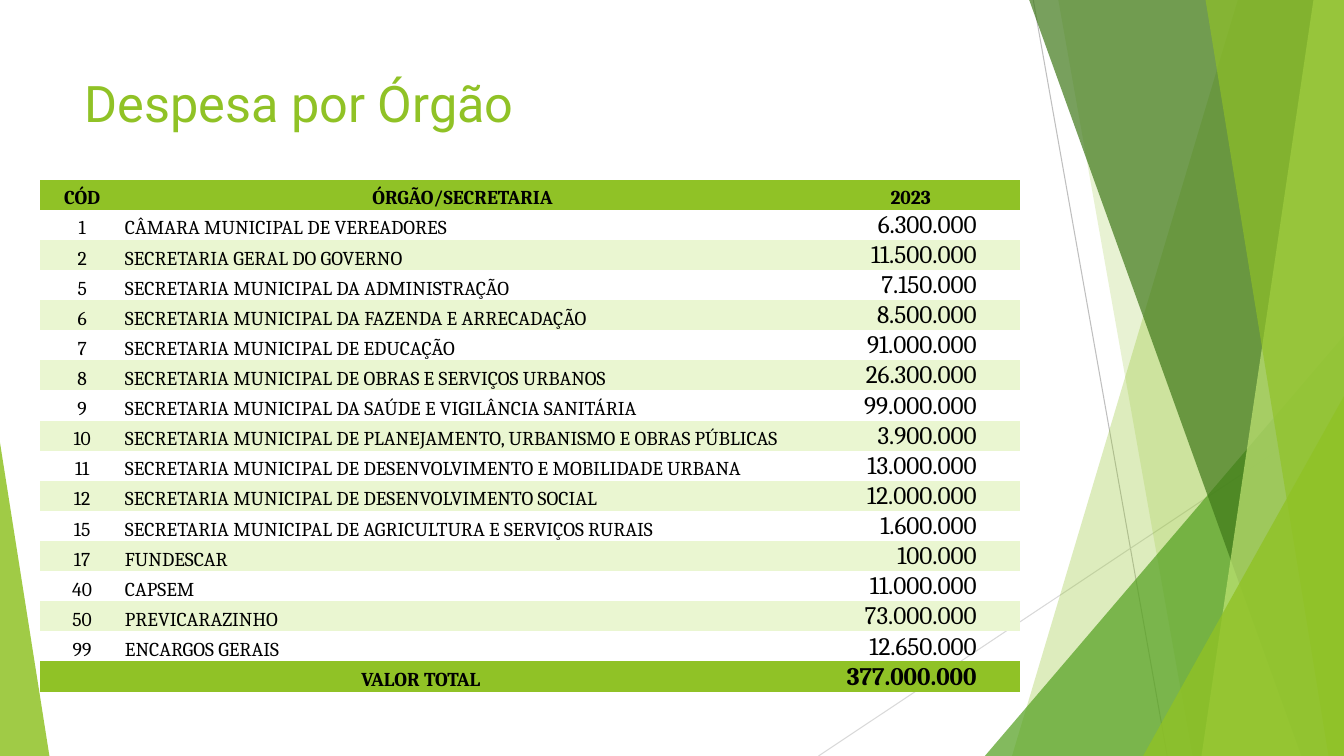
from lxml import etree
from pptx import Presentation
from pptx.dml.color import RGBColor
from pptx.enum.shapes import MSO_CONNECTOR, MSO_SHAPE
from pptx.enum.text import MSO_ANCHOR, MSO_AUTO_SIZE, PP_ALIGN
from pptx.oxml.ns import qn
from pptx.util import Inches, Pt

LINE = MSO_CONNECTOR.STRAIGHT
WEDGE = MSO_SHAPE.ISOSCELES_TRIANGLE
TOP, BOTTOM = MSO_ANCHOR.TOP, MSO_ANCHOR.BOTTOM
LEFT, MID, RIGHT = PP_ALIGN.LEFT, PP_ALIGN.CENTER, PP_ALIGN.RIGHT
NO_FIT = MSO_AUTO_SIZE.NONE

WIDE, HIGH = Inches(13.333), Inches(7.5)
PLAIN = "{2D5ABB26-0587-4C30-8999-92F81FD0307C}"
COLORS = {
    "lime": "90C226", "pale": "C0E474", "leaf": "54A021", "moss": "3F7819",
    "band": "EAF6D1", "text": "000000", "gray": "BFBFBF", "mist": "D9D9D9",
}

# Lines: start x, y and end x, y, in percent of the box
LINES = [(76.88, 0, 86.85, 100, "gray"), (100, 53.73, 60.9, 100, "mist")]
# Facets reach the right edge: top x, bottom x, color, opacity
BACK = [(92.1, 75.3, "lime", 30), (78.75, 88.73, "lime", 20)]
FRONT = [(76.58, 96.83, "moss", 70), (97.73, 89.4, "pale", 70),
         (89.7, 98.85, "lime", 65)]
# Wedges stand on the bottom edge: left, top, width, tip, color, opacity
LEAF = (73.28, 44.4, 26.72, 1, "leaf", 72)
SIDES = [(85.05, 52.4, 14.95, 1, "lime", 80), (0, 58.53, 3.68, 0, "lime", 85)]

HEAD = ("CÓD", "ÓRGÃO/SECRETARIA", "2023")
ROWS = [
    ("1", "CÂMARA MUNICIPAL DE VEREADORES", "6.300.000"),
    ("2", "SECRETARIA GERAL DO GOVERNO", "11.500.000"),
    ("5", "SECRETARIA MUNICIPAL DA ADMINISTRAÇÃO", "7.150.000"),
    ("6", "SECRETARIA MUNICIPAL DA FAZENDA E ARRECADAÇÃO", "8.500.000"),
    ("7", "SECRETARIA MUNICIPAL DE EDUCAÇÃO", "91.000.000"),
    ("8", "SECRETARIA MUNICIPAL DE OBRAS E SERVIÇOS URBANOS", "26.300.000"),
    ("9", "SECRETARIA MUNICIPAL DA SAÚDE E VIGILÂNCIA SANITÁRIA", "99.000.000"),
    ("10", "SECRETARIA MUNICIPAL DE PLANEJAMENTO, URBANISMO E OBRAS PÚBLICAS",
     "3.900.000"),
    ("11", "SECRETARIA MUNICIPAL DE DESENVOLVIMENTO E MOBILIDADE URBANA",
     "13.000.000"),
    ("12", "SECRETARIA MUNICIPAL DE DESENVOLVIMENTO SOCIAL", "12.000.000"),
    ("15", "SECRETARIA MUNICIPAL DE AGRICULTURA E SERVIÇOS RURAIS", "1.600.000"),
    ("17", "FUNDESCAR", "100.000"),
    ("40", "CAPSEM", "11.000.000"),
    ("50", "PREVICARAZINHO", "73.000.000"),
    ("99", "ENCARGOS GERAIS", "12.650.000"),
]
TOTAL = ("VALOR TOTAL", "", "377.000.000")
SHARES = (8.54, 69.14, 22.32)


def color(name):
    return RGBColor.from_string(COLORS[name])


def part(box, x, y, w, h):
    """Return the sub-box given in percent of a box."""
    left, top, wide, high = box
    return (int(left + wide * x / 100), int(top + high * y / 100),
            int(wide * w / 100), int(high * h / 100))


def write(frame, text, font, size, tint, align, bold=False):
    para = frame.paragraphs[0]
    para.alignment = align
    run = para.add_run()
    run.text = text
    run.font.name, run.font.size, run.font.bold = font, Pt(size), bold
    run.font.color.rgb = color(tint)


def paint(shape, tint, alpha):
    shape.shadow.inherit = False
    shape.line.fill.background()
    shape.fill.solid()
    shape.fill.fore_color.rgb = color(tint)
    node = shape.fill._xPr.find(qn("a:solidFill"))[0]
    etree.SubElement(node, qn("a:alpha"), val=str(alpha * 1000))


def add_line(slide, box, x1, y1, x2, y2, tint):
    start, end = part(box, x1, y1, 0, 0), part(box, x2, y2, 0, 0)
    line = slide.shapes.add_connector(LINE, *start[:2], *end[:2])
    line.line.color.rgb = color(tint)
    line.line.width = Pt(0.75)
    etree.SubElement(line._element.spPr, qn("a:effectLst"))


def add_facet(slide, box, top, base, tint, alpha):
    points = [part(box, x, y, 0, 0)[:2]
              for x, y in ((top, 0), (100, 0), (100, 100), (base, 100))]
    form = slide.shapes.build_freeform(*points[0])
    form.add_line_segments(points[1:], close=True)
    paint(form.convert_to_shape(), tint, alpha)


def add_wedge(slide, box, x, y, width, tip, tint, alpha):
    wedge = slide.shapes.add_shape(WEDGE, *part(box, x, y, width, 100 - y))
    wedge.adjustments[0] = tip
    paint(wedge, tint, alpha)


def add_decor(slide, box):
    for line in LINES:
        add_line(slide, box, *line)
    for facet in BACK:
        add_facet(slide, box, *facet)
    add_wedge(slide, box, *LEAF)
    for facet in FRONT:
        add_facet(slide, box, *facet)
    for wedge in SIDES:
        add_wedge(slide, box, *wedge)


def add_title(slide, box):
    title = slide.shapes.title
    title.left, title.top, title.width, title.height = box
    frame = title.text_frame
    frame.word_wrap, frame.auto_size = True, NO_FIT
    frame.vertical_anchor = TOP
    write(frame, "Despesa por Órgão", "Roboto", 36, "lime", LEFT)


def fill_cell(cell, text, fill, size, align, bold):
    cell.vertical_anchor = BOTTOM
    cell.margin_left = cell.margin_top = Inches(0.01)
    cell.margin_right = Inches(0.43 if align == RIGHT else 0.01)
    cell.margin_bottom = 0
    if fill:
        cell.fill.solid()
        cell.fill.fore_color.rgb = color(fill)
    else:
        cell.fill.background()
    if text:
        write(cell.text_frame, text, "Cambria", size, "text", align, bold)


def add_costs(slide, box):
    rows = [HEAD, *ROWS, TOTAL]
    last = len(rows) - 1
    table = slide.shapes.add_table(len(rows), len(HEAD), *box).table
    table.first_row = table.horz_banding = False
    table._tbl.tblPr.find(qn("a:tableStyleId")).text = PLAIN
    for col, share in zip(table.columns, SHARES):
        col.width = int(box[2] * share / 100)
    table.cell(last, 0).merge(table.cell(last, 1))
    for r, row in enumerate(rows):
        bold = r in (0, last)
        fill = "lime" if bold else "band" if r % 2 == 0 else None
        for c, text in enumerate(row):
            money = c == 2 and r > 0
            align = RIGHT if money else LEFT if c == 1 and r else MID
            fill_cell(table.cell(r, c), text, fill, 18 if money else 14,
                      align, bold)


def main():
    deck = Presentation()
    deck.slide_width, deck.slide_height = WIDE, HIGH
    slide = deck.slides.add_slide(deck.slide_layouts[5])
    page = (0, 0, WIDE, HIGH)
    add_decor(slide, page)
    add_title(slide, part(page, 5.55, 8.93, 70.5, 19.2))
    add_costs(slide, part(page, 3, 23.87, 72.9, 65.73))
    deck.save("out.pptx")


if __name__ == "__main__":
    main()
